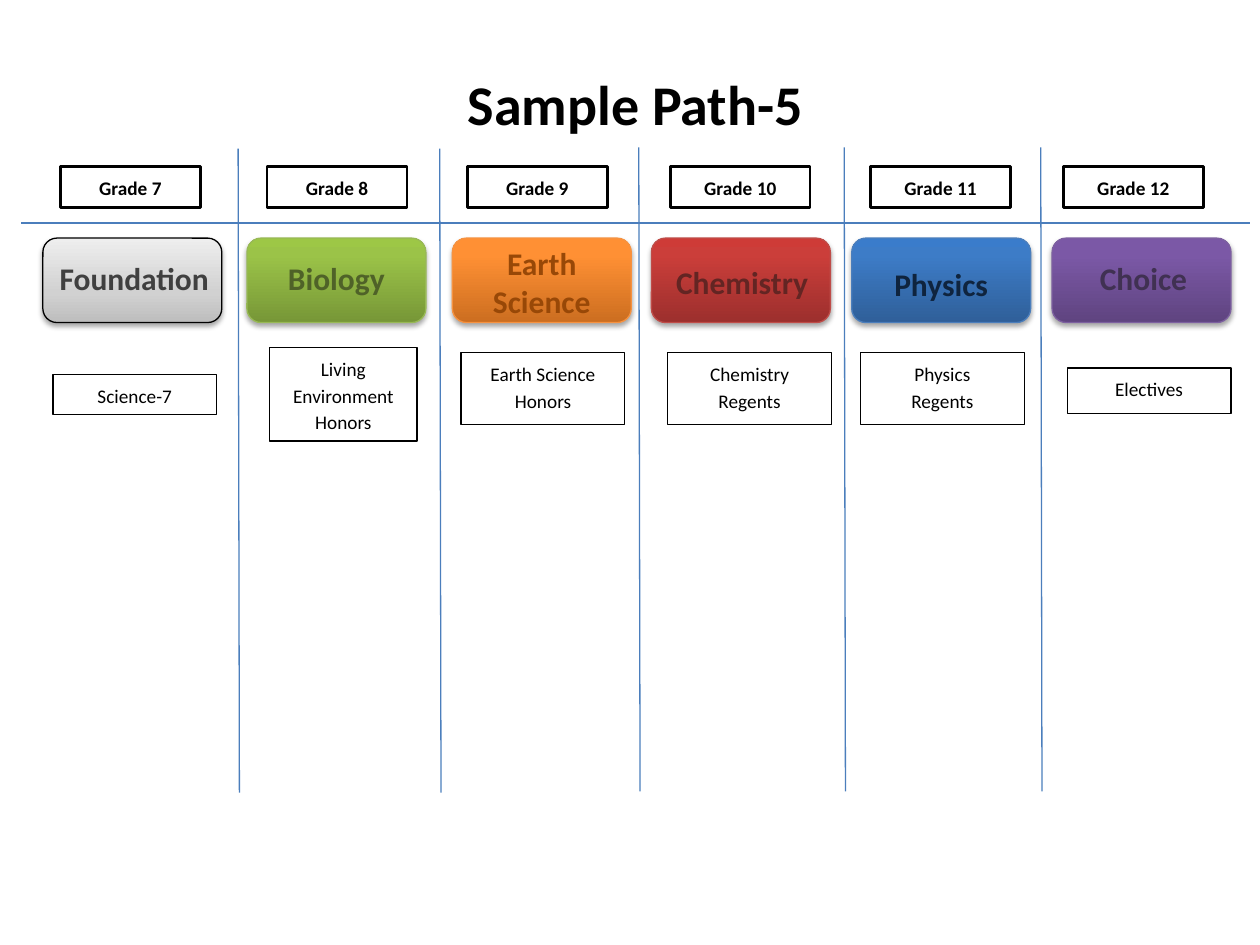
from lxml import etree
from pptx import Presentation
from pptx.dml.color import RGBColor
from pptx.enum import shapes, text
from pptx.oxml import ns
from pptx.util import Inches, Pt

BLACK = RGBColor(0x00, 0x00, 0x00)
WHITE = RGBColor(0xFF, 0xFF, 0xFF)
RULE = RGBColor(0x4B, 0x7E, 0xBC)
FOUNDATION = RGBColor(0x40, 0x40, 0x40)
BIOLOGY = RGBColor(0x4F, 0x62, 0x28)
EARTH = RGBColor(0x98, 0x48, 0x07)
CHEMISTRY = RGBColor(0x63, 0x25, 0x23)
PHYSICS = RGBColor(0x0F, 0x24, 0x3E)
CHOICE = RGBColor(0x40, 0x31, 0x52)
GREEN_EDGE = RGBColor(0x98, 0xB9, 0x55)
ORANGE_EDGE = RGBColor(0xF6, 0x92, 0x40)
RED_EDGE = RGBColor(0xBF, 0x4C, 0x48)
PURPLE_EDGE = RGBColor(0x7D, 0x60, 0xA0)

TITLE = {"name": "Calibri", "size": Pt(32), "bold": True}
GRADE = {"name": "Calibri", "size": Pt(11), "bold": True}
COURSE = {"name": "Calibri", "size": Pt(11), "bold": False}
SUBJECT = {"name": "Calibri", "size": Pt(18), "bold": True}
BOX_PARAGRAPH = {"line_spacing": 1.15, "space_after": Pt(10)}

DIVIDERS = [(1.89, 1.18), (3.49, 1.18), (5.07, 1.17), (6.7, 1.17), (8.26, 1.17)]
GRADES = [(7, 0.48), (8, 2.12), (9, 3.71), (10, 5.32), (11, 6.91), (12, 8.44)]
COURSES = [
    ("Science-7", 0.42, 2.97, 1.3, 0.32),
    ("Living Environment Honors", 2.14, 2.76, 1.17, 0.74),
    ("Earth Science Honors", 3.66, 2.8, 1.3, 0.57),
    ("Chemistry Regents", 5.3, 2.8, 1.3, 0.57),
    ("Physics\vRegents", 6.83, 2.8, 1.3, 0.57),
    ("Electives", 8.47, 2.92, 1.3, 0.36),
]
SUBJECTS = [
    ("Foundation", FOUNDATION, (0.34, 2.01, 1.45, 0.4), 0.34, BLACK,
     [(0, "BDBDBD"), (35, "D1D1D1"), (100, "EEEEEE")]),
    ("Biology", BIOLOGY, (2.17, 2.01, 1, 0.42), 1.96, GREEN_EDGE,
     [(0, "779737"), (80, "9BC348"), (100, "9DC746")]),
    ("Earth Science", EARTH, (3.76, 1.89, 1.08, 0.71), 3.59, ORANGE_EDGE,
     [(0, "CC6E20"), (80, "FF9034"), (100, "FF9136")]),
    ("Chemistry", CHEMISTRY, (5.19, 2.04, 1.4, 0.4), 5.17, RED_EDGE,
     [(0, "9C2F2D"), (80, "CB3E3A"), (100, "CE3B37")]),
    ("Physics", PHYSICS, (6.97, 2.05, 1, 0.42), 6.76, RULE,
     [(0, "2F5F99"), (80, "3D7CC7"), (100, "3A7CCB")]),
    ("Choice", CHOICE, (8.35, 2.01, 1.45, 0.4), 8.35, PURPLE_EDGE,
     [(0, "5F4480"), (80, "7B58A6"), (100, "7C57A8")]),
]


def apply(target, values):
    for key, value in values.items():
        setattr(target, key, value)


def add_color(parent, color, alpha=None):
    clr = etree.SubElement(parent, ns.qn("a:srgbClr"), val=color)
    if alpha:
        etree.SubElement(clr, ns.qn("a:alpha"), val=str(alpha * 1000))


class PathSlide:
    def __init__(self, prs):
        self.s = prs.slides.add_slide(prs.slide_layouts[5])

    def set_text(self, tf, words, font, color, paragraph=None):
        tf.word_wrap = True
        tf.vertical_anchor = text.MSO_ANCHOR.TOP
        p = tf.paragraphs[0]
        p.text = words
        p.alignment = text.PP_ALIGN.CENTER
        apply(p, paragraph or {})
        for r in p.runs:
            apply(r.font, font)
            r.font.color.rgb = color

    def title(self, words, *box):
        sp = self.s.shapes.title
        sp.left, sp.top, sp.width, sp.height = map(Inches, box)
        self.set_text(sp.text_frame, words, TITLE, BLACK)
        sp.text_frame.word_wrap = False
        sp.text_frame.auto_size = text.MSO_AUTO_SIZE.NONE

    def rule(self, *ends):
        line = self.s.shapes.add_connector(
            shapes.MSO_CONNECTOR.STRAIGHT, *map(Inches, ends))
        line.line.color.rgb = RULE
        line.line.width = Pt(0.75)
        etree.SubElement(line._element.spPr, ns.qn("a:effectLst"))

    def shape(self, kind, box, edge, weight):
        sp = self.s.shapes.add_shape(kind, *map(Inches, box))
        sp.shadow.inherit = False
        sp.line.color.rgb = edge
        sp.line.width = Pt(weight)
        return sp

    def box(self, words, box, font, weight):
        sp = self.shape(shapes.MSO_SHAPE.RECTANGLE, box, BLACK, weight)
        sp.fill.solid()
        sp.fill.fore_color.rgb = WHITE
        self.set_text(sp.text_frame, words, font, BLACK, BOX_PARAGRAPH)

    def pill(self, left, edge, stops):
        sp = self.shape(shapes.MSO_SHAPE.ROUNDED_RECTANGLE,
                        (left, 1.89, 1.42, 0.67), edge, 0.75)
        sp.fill.gradient()
        sp.fill.gradient_angle = 90
        props = sp._element.spPr
        stop_list = props.find(".//" + ns.qn("a:gsLst"))
        for stop in list(stop_list):
            stop_list.remove(stop)
        for position, color in stops:
            stop = etree.SubElement(stop_list, ns.qn("a:gs"), pos=str(position * 1000))
            add_color(stop, color)
        shadow = etree.SubElement(
            props.find(ns.qn("a:effectLst")), ns.qn("a:outerShdw"),
            blurRad=str(Pt(3.1)), dist=str(Pt(1.8)), dir="5400000", rotWithShape="0")
        add_color(shadow, "000000", 35)

    def label(self, words, box, color):
        sp = self.s.shapes.add_textbox(*map(Inches, box))
        self.set_text(sp.text_frame, words, SUBJECT, color)


def main():
    prs = Presentation()
    prs.slide_width, prs.slide_height = Inches(10), Inches(7.5)
    page = PathSlide(prs)
    page.title("Sample Path-5", 3.6, 0.5, 2.89, 0.64)
    for x, top in DIVIDERS:
        page.rule(x, top, x + 0.01, top + 5.11)
    page.rule(0.17, 1.77, 9.92, 1.77)
    for grade, left in GRADES:
        page.box(f"Grade {grade}", (left, 1.32, 1.11, 0.33), GRADE, 1.5)
    for words, *box in COURSES:
        page.box(words, box, COURSE, 0.75)
    for words, color, box, left, edge, stops in SUBJECTS:
        page.pill(left, edge, stops)
        page.label(words, box, color)
    prs.save("out.pptx")


if __name__ == "__main__":
    main()
